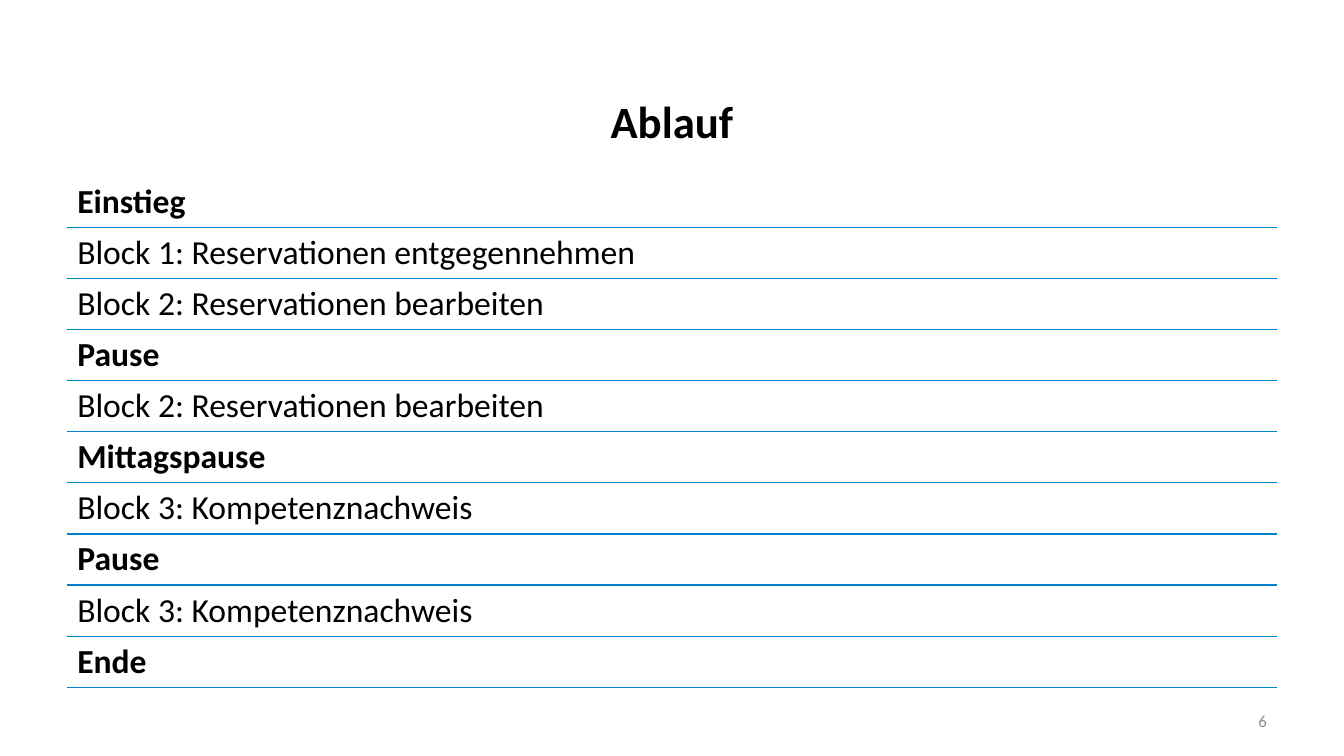
import dataclasses

import lxml.etree
import pptx
import pptx.dml.color
import pptx.enum.text
import pptx.oxml.ns
import pptx.slide
import pptx.text.text
import pptx.util

WIDE = pptx.util.Inches(13.33)
HIGH = pptx.util.Inches(7.5)
FONT = "Calibri"
PLAIN = "{2D5ABB26-0587-4C30-8999-92F81FD0307C}"
HUES = {"text": "000000", "rule": "0082CA", "page": "8C8C8C"}
ALIGN = pptx.enum.text.PP_ALIGN
MIDDLE = pptx.enum.text.MSO_ANCHOR.MIDDLE
qn = pptx.oxml.ns.qn


@dataclasses.dataclass(frozen=True)
class Area:
    left: float
    top: float
    width: float
    height: float

    def box(self) -> tuple[int, int, int, int]:
        return (
            round(self.left * WIDE),
            round(self.top * HIGH),
            round(self.width * WIDE),
            round(self.height * HIGH),
        )


@dataclasses.dataclass(frozen=True)
class Style:
    size: int
    hue: str = "text"
    bold: bool = False
    align: ALIGN = ALIGN.LEFT


@dataclasses.dataclass(frozen=True)
class Step:
    text: str
    bold: bool = False


TITLE = Area(0.05, 0.112, 0.9, 0.095)
TABLE = Area(0.05, 0.233, 0.9, 0.667)
PAGE = Area(0.717, 0.927, 0.233, 0.053)
SPLIT = (0.835, 0.165)
STEPS = (
    Step("Einstieg", True),
    Step("Block 1: Reservationen entgegennehmen"),
    Step("Block 2: Reservationen bearbeiten"),
    Step("Pause", True),
    Step("Block 2: Reservationen bearbeiten"),
    Step("Mittagspause", True),
    Step("Block 3: Kompetenznachweis"),
    Step("Pause", True),
    Step("Block 3: Kompetenznachweis"),
    Step("Ende", True),
)


def write(frame: pptx.text.text.TextFrame, text: str, style: Style) -> None:
    frame.word_wrap = True
    para = frame.paragraphs[0]
    para.alignment = style.align
    run = para.add_run()
    run.text = text
    run.font.name = FONT
    run.font.size = pptx.util.Pt(style.size)
    run.font.bold = style.bold
    run.font.color.rgb = pptx.dml.color.RGBColor.from_string(HUES[style.hue])


def add_title(slide: pptx.slide.Slide, text: str) -> None:
    title = slide.shapes.title
    title.left, title.top, title.width, title.height = TITLE.box()
    title.text_frame.vertical_anchor = MIDDLE
    write(title.text_frame, text, Style(32, bold=True, align=ALIGN.CENTER))


def add_page(slide: pptx.slide.Slide, text: str) -> None:
    frame = slide.shapes.add_textbox(*PAGE.box()).text_frame
    frame.vertical_anchor = MIDDLE
    write(frame, text, Style(12, "page", align=ALIGN.RIGHT))


def make_rule() -> lxml.etree._Element:
    line = lxml.etree.Element(qn("a:lnB"), w=str(pptx.util.Pt(1)))
    fill = lxml.etree.SubElement(line, qn("a:solidFill"))
    lxml.etree.SubElement(fill, qn("a:srgbClr"), val=HUES["rule"])
    return line


def add_steps(slide: pptx.slide.Slide, steps: tuple[Step, ...]) -> None:
    area = TABLE.box()
    frame = slide.shapes.add_table(len(steps), len(SPLIT), *area)
    table = frame.table
    table.first_row = False
    table.horz_banding = False
    for mark in frame.element.iter(qn("a:tableStyleId")):
        mark.text = PLAIN
    for col, share in zip(table.columns, SPLIT):
        col.width = round(area[2] * share)
    for row, step in zip(table.rows, steps):
        row.height = area[3] // len(steps)
        for cell in row.cells:
            cell.fill.background()
        write(row.cells[0].text_frame, step.text, Style(24, bold=step.bold))
    for props in frame.element.iter(qn("a:tcPr")):
        props.insert(0, make_rule())


def main() -> None:
    deck = pptx.Presentation()
    deck.slide_width, deck.slide_height = WIDE, HIGH
    slide = deck.slides.add_slide(deck.slide_layouts[5])
    add_title(slide, "Ablauf")
    add_steps(slide, STEPS)
    add_page(slide, "6")
    deck.save("out.pptx")


if __name__ == "__main__":
    main()
